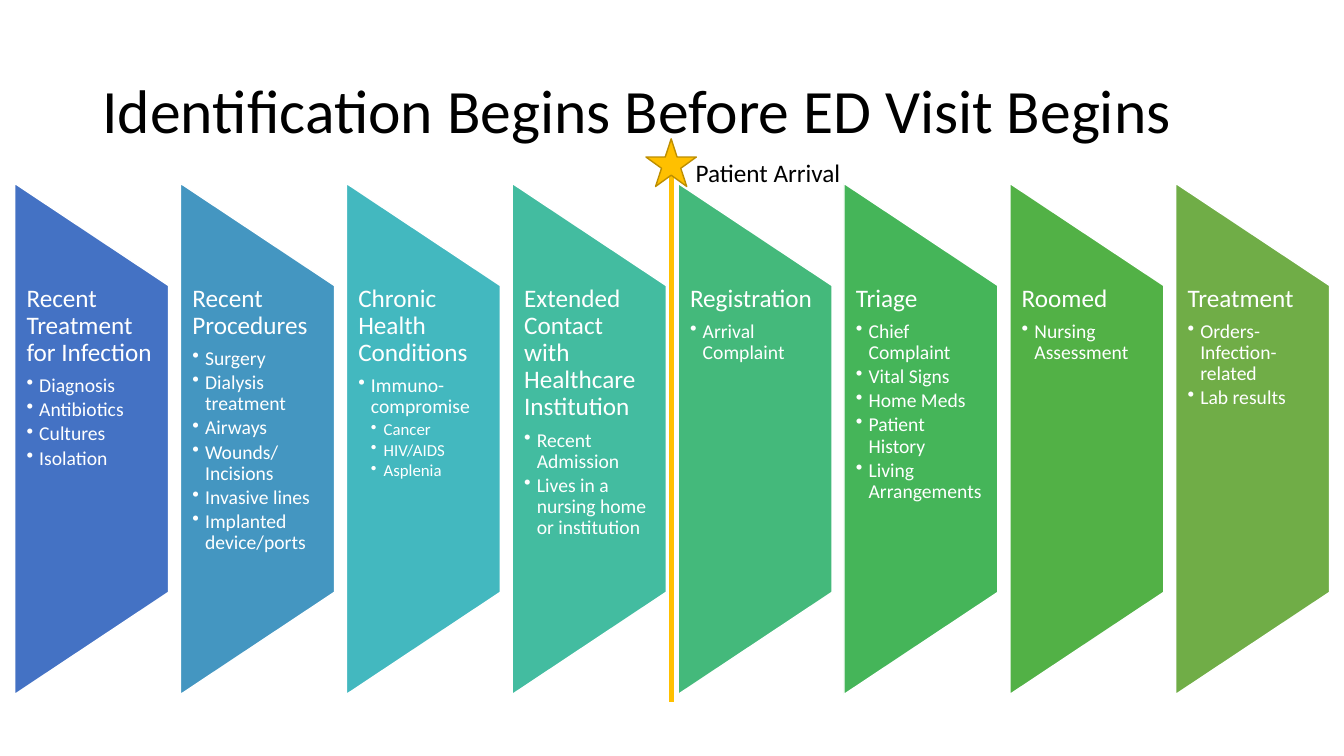
from dataclasses import dataclass

from lxml import etree
from pptx import Presentation
from pptx.dml.color import RGBColor
from pptx.enum.shapes import MSO_CONNECTOR, MSO_SHAPE
from pptx.enum.text import MSO_ANCHOR, MSO_AUTO_SIZE, PP_ALIGN
from pptx.oxml.ns import qn
from pptx.util import Cm, Pt

STRAIGHT = MSO_CONNECTOR.STRAIGHT
TRAPEZOID = MSO_SHAPE.FLOWCHART_MANUAL_OPERATION
STAR = MSO_SHAPE.STAR_5_POINT
MIDDLE = MSO_ANCHOR.MIDDLE
LEFT = PP_ALIGN.LEFT
FIXED_SIZE = MSO_AUTO_SIZE.NONE


@dataclass(frozen=True)
class Theme:
    font: str = "Calibri"
    dark: str = "000000"
    light: str = "FFFFFF"
    accent: str = "FFC000"
    accent_edge: str = "BD8E00"
    title_size: int = 44
    level_sizes: tuple = (18, 14, 12)
    level_gaps: tuple = (0.35, 0.15, 0.15)
    line_spacing: float = 0.9
    bullet_indent: float = 0.32


STAGES = [
    ("4472C4", "Recent Treatment for Infection",
     [(1, "Diagnosis"), (1, "Antibiotics"), (1, "Cultures"), (1, "Isolation")]),
    ("4496C1", "Recent Procedures",
     [(1, "Surgery"), (1, "Dialysis treatment"), (1, "Airways"),
      (1, "Wounds/ Incisions"), (1, "Invasive lines"),
      (1, "Implanted device/ports")]),
    ("43B8BF", "Chronic Health Conditions",
     [(1, "Immuno-compromise"), (2, "Cancer"), (2, "HIV/AIDS"), (2, "Asplenia")]),
    ("43BCA0", "Extended Contact \vwith Healthcare Institution",
     [(1, "Recent Admission"), (1, "Lives in a nursing home or institution")]),
    ("44B97B", "Registration", [(1, "Arrival Complaint")]),
    ("45B559", "Triage",
     [(1, "Chief Complaint"), (1, "Vital Signs"), (1, "Home Meds"),
      (1, "Patient \vHistory"), (1, "Living Arrangements")]),
    ("52B146", "Roomed", [(1, "Nursing Assessment")]),
    ("70AD47", "Treatment",
     [(1, "Orders-Infection- related"), (1, "Lab results")]),
]
STAGE_LEFT, STAGE_TOP, STAGE_PITCH = 0.37, 4.62, 4.18
STAGE_WIDTH, STAGE_HEIGHT = 3.88, 12.88
TEXT_TOP, TEXT_HEIGHT, TEXT_INSET = 7.19, 7.72, 0.3


class SlideBuilder:
    def __init__(self, slide, theme):
        self.slide = slide
        self.theme = theme

    def style_font(self, paragraph, size, color):
        paragraph.font.name = self.theme.font
        paragraph.font.size = Pt(size)
        paragraph.font.color.rgb = RGBColor.from_string(color)

    def title(self, text, left, top, width, height):
        shape = self.slide.shapes.title
        shape.left, shape.top = Cm(left), Cm(top)
        shape.width, shape.height = Cm(width), Cm(height)
        frame = shape.text_frame
        frame.text = text
        frame.auto_size = FIXED_SIZE
        frame.vertical_anchor = MIDDLE
        paragraph = frame.paragraphs[0]
        paragraph.alignment = LEFT
        paragraph.line_spacing = self.theme.line_spacing
        self.style_font(paragraph, self.theme.title_size, self.theme.dark)

    def shape(self, kind, left, top, width, height, fill, edge, rotation=0):
        shape = self.slide.shapes.add_shape(
            kind, Cm(left), Cm(top), Cm(width), Cm(height))
        shape.rotation = rotation
        shape.shadow.inherit = False
        shape.fill.solid()
        shape.fill.fore_color.rgb = RGBColor.from_string(fill)
        shape.line.color.rgb = RGBColor.from_string(edge)
        shape.line.width = Pt(1)

    def text_box(self, left, top, width, height):
        box = self.slide.shapes.add_textbox(
            Cm(left), Cm(top), Cm(width), Cm(height))
        box.text_frame.word_wrap = True
        return box.text_frame

    def label(self, text, left, top, width, height):
        paragraph = self.text_box(left, top, width, height).paragraphs[0]
        paragraph.text = text
        self.style_font(paragraph, self.theme.level_sizes[0], self.theme.dark)

    def bullet(self, paragraph, level):
        indent = Cm(self.theme.bullet_indent)
        properties = paragraph._p.get_or_add_pPr()
        properties.set("marL", str(indent * level))
        properties.set("indent", str(-indent))
        etree.SubElement(properties, qn("a:buChar")).set("char", "•")

    def outline(self, heading, items, left, top, width, height):
        frame = self.text_box(left, top, width, height)
        frame.margin_left = frame.margin_right = Cm(TEXT_INSET)
        frame.margin_top = frame.margin_bottom = 0
        for index, (level, text) in enumerate([(0, heading), *items]):
            paragraph = frame.add_paragraph() if index else frame.paragraphs[0]
            paragraph.text = text
            paragraph.level = level
            if level:
                self.bullet(paragraph, level)
            size = self.theme.level_sizes[level]
            paragraph.line_spacing = self.theme.line_spacing
            paragraph.space_after = Pt(size * self.theme.level_gaps[level])
            self.style_font(paragraph, size, self.theme.light)

    def stage(self, index, color, heading, items):
        left = STAGE_LEFT + index * STAGE_PITCH
        offset = (STAGE_HEIGHT - STAGE_WIDTH) / 2
        self.shape(TRAPEZOID, left - offset, STAGE_TOP + offset, STAGE_HEIGHT,
                   STAGE_WIDTH, color, self.theme.light, rotation=270)
        self.outline(heading, items, left, TEXT_TOP, STAGE_WIDTH, TEXT_HEIGHT)

    def line(self, start_x, start_y, end_x, end_y, width):
        connector = self.slide.shapes.add_connector(
            STRAIGHT, Cm(start_x), Cm(start_y), Cm(end_x), Cm(end_y))
        connector.line.color.rgb = RGBColor.from_string(self.theme.accent)
        connector.line.width = Pt(width)
        etree.SubElement(connector._element.spPr, qn("a:effectLst"))


def main():
    presentation = Presentation()
    presentation.slide_width, presentation.slide_height = Cm(33.87), Cm(19.05)
    theme = Theme()
    slide = presentation.slides.add_slide(presentation.slide_layouts[5])
    builder = SlideBuilder(slide, theme)
    builder.title("Identification Begins Before ED Visit Begins",
                  2.33, 1.01, 29.21, 3.68)
    for index, stage in enumerate(STAGES):
        builder.stage(index, *stage)
    builder.line(16.92, 17.68, 16.92, 4.42, 3.5)
    builder.shape(STAR, 16.28, 3.5, 1.27, 1.2, theme.accent, theme.accent_edge)
    builder.label("Patient Arrival", 17.28, 3.84, 4.72, 1.03)
    presentation.save("out.pptx")


if __name__ == "__main__":
    main()
